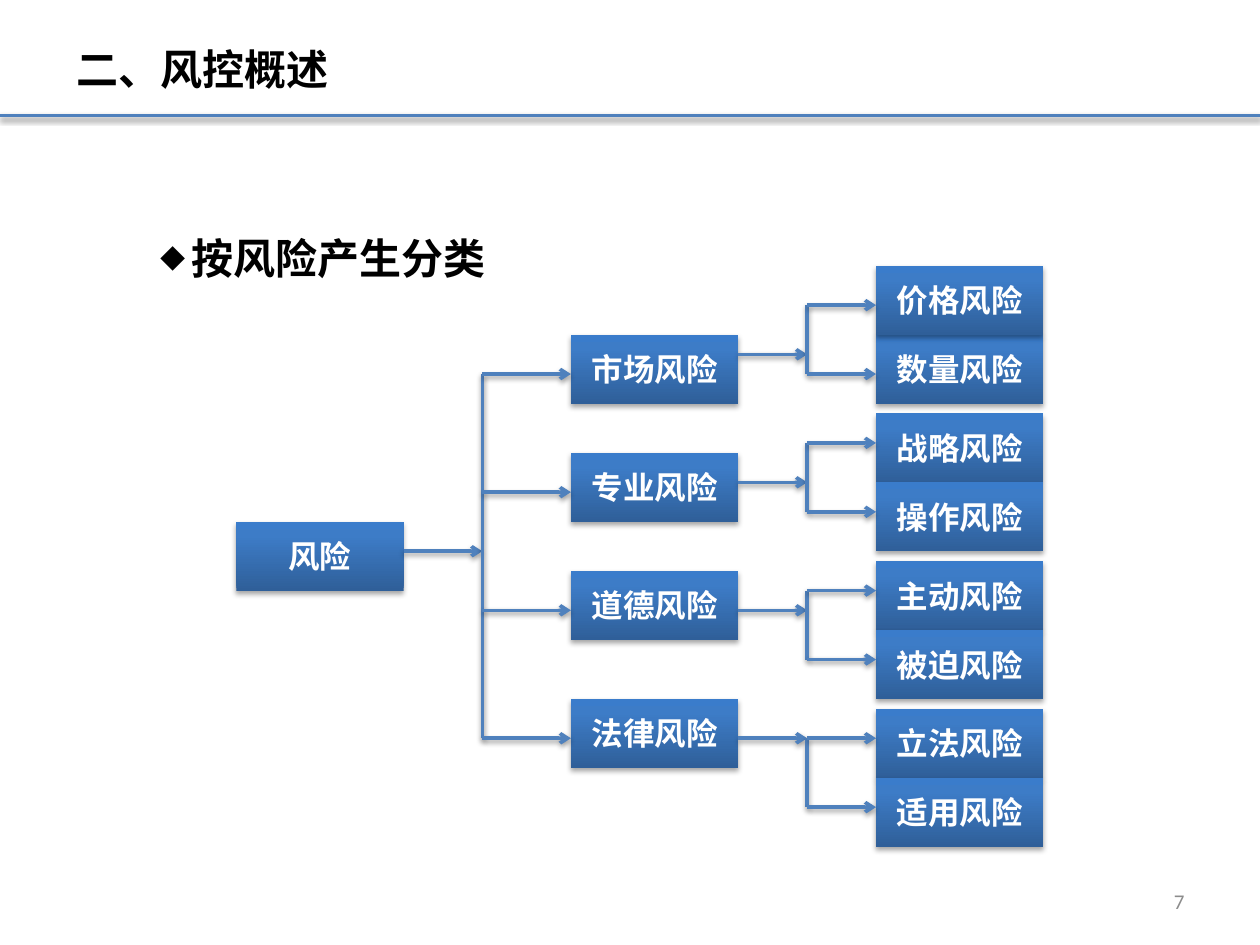
from pptx import Presentation
from pptx.dml.color import RGBColor as Rgb
from pptx.enum.shapes import MSO_CONNECTOR as Conn, MSO_SHAPE as Shape
from pptx.enum.text import MSO_ANCHOR as Anchor, MSO_AUTO_SIZE as Fit, PP_ALIGN as Align
from pptx.oxml import parse_xml
from pptx.oxml.ns import nsdecls
from pptx.util import Inches, Pt

BLUE = Rgb(0x4F, 0x81, 0xBD)
DARK = Rgb(0x2F, 0x5F, 0x99)
MID = Rgb(0x3D, 0x7C, 0xC7)
LIGHT = Rgb(0x3A, 0x7C, 0xCB)
WHITE = Rgb(0xFF, 0xFF, 0xFF)
BLACK = Rgb(0, 0, 0)
GREY = Rgb(0x8C, 0x8C, 0x8C)
HAN = "Noto Sans CJK SC"
COLS = 128
WIDE, HIGH = 17, 7
ROOT, BUS, MAIN, FORK, LEAF = 24, 49, 58, 82, 89
TREE = [
    ("市场风险", 34, 38, 36, [("数量风险", 34, 38), ("价格风险", 27, 31)]),
    ("专业风险", 46, 50, 49, [("战略风险", 42, 45), ("操作风险", 49, 52)]),
    ("道德风险", 58, 62, 62, [("主动风险", 57, 60), ("被迫风险", 64, 67)]),
    ("法律风险", 71, 75, 75, [("立法风险", 72, 75), ("适用风险", 79, 82)]),
]


def node(xml):
    tag, rest = xml.split(">", 1)
    head, gap, more = tag.partition(" ")
    return parse_xml(f"{head} {nsdecls('a')} {more}>{rest}")


def write(frame, text, size=24, color=BLACK, font=HAN, bold=True,
          align=Align.LEFT, anchor=Anchor.TOP, bullet=None):
    frame.word_wrap = True
    frame.vertical_anchor = anchor
    para = frame.paragraphs[0]
    para.alignment = align
    if bullet:
        props = para._p.get_or_add_pPr()
        props.set("marL", str(Inches(0.33)))
        props.set("indent", str(-Inches(0.25)))
        props.append(node('<a:buSzPct val="60000"></a:buSzPct>'))
        props.append(node(f'<a:buFont typeface="{font}"></a:buFont>'))
        props.append(node(f'<a:buChar char="{bullet}"></a:buChar>'))
    run = para.add_run()
    run.text = text
    run.font.size, run.font.bold, run.font.name = Pt(size), bold, font
    run.font.color.rgb = color
    run._r.get_or_add_rPr().append(node(f'<a:ea typeface="{font}"></a:ea>'))


class Board:
    def __init__(self, deck):
        self.items = deck.slides.add_slide(deck.slide_layouts[6]).shapes
        self.unit = deck.slide_width / COLS

    def at(self, *cells):
        return [round(cell * self.unit) for cell in cells]

    def shade(self, item, alpha, dist):
        item._element.spPr.append(node(
            f'<a:effectLst><a:outerShdw blurRad="{Pt(3.1)}" dist="{Pt(dist)}" '
            f'dir="5400000" rotWithShape="0"><a:srgbClr val="{BLACK}">'
            f'<a:alpha val="{alpha}000"/></a:srgbClr></a:outerShdw></a:effectLst>'))

    def box(self, name, col, row):
        item = self.items.add_shape(Shape.RECTANGLE, *self.at(col, row, WIDE, HIGH))
        item.line.fill.background()
        stops = "".join(f'<a:gs pos="{pos}000"><a:srgbClr val="{tone}"/></a:gs>'
                        for pos, tone in [(0, DARK), (80, MID), (100, LIGHT)])
        item._element.spPr.insert(2, node(
            f'<a:gradFill rotWithShape="1"><a:gsLst>{stops}</a:gsLst>'
            '<a:lin ang="16200000" scaled="0"/></a:gradFill>'))
        self.shade(item, 35, 1.8)
        write(item.text_frame, name, size=18, color=WHITE,
              align=Align.CENTER, anchor=Anchor.MIDDLE)

    def line(self, x, y, to_x, to_y, arrow=False):
        item = self.items.add_connector(Conn.STRAIGHT, *self.at(x, y, to_x, to_y))
        item.line.color.rgb = BLUE
        item.line.width = Pt(2)
        if arrow:
            item.line._get_or_add_ln().append(node('<a:tailEnd type="arrow"></a:tailEnd>'))
        self.shade(item, 38, 1.6)

    def arrow(self, x, to_x, y):
        self.line(x, y, to_x, y, arrow=True)

    def stem(self, x, rows):
        self.line(x, min(rows), x, max(rows))

    def text(self, words, col, row, wide, high, grow=True, **form):
        item = self.items.add_textbox(*self.at(col, row, wide, high))
        write(item.text_frame, words, **form)
        if grow:
            item.text_frame.auto_size = Fit.SHAPE_TO_FIT_TEXT


def main():
    deck = Presentation()
    deck.slide_width, deck.slide_height = Inches(10), Inches(7.5)
    board = Board(deck)
    board.line(0, 11.75, COLS, 11.75)
    board.text("二、风控概述", 6.5, 3.75, 33.25, 6.5)
    board.text("按风险产生分类", 14, 23, 48, 6.5, bullet="◆")
    board.box("风险", ROOT, 53)
    board.arrow(ROOT + WIDE, BUS, 56)
    board.stem(BUS, [entry for name, top, entry, out, leaves in TREE])
    for name, top, entry, out, leaves in TREE:
        board.box(name, MAIN, top)
        board.arrow(BUS, MAIN, entry)
        board.arrow(MAIN + WIDE, FORK, out)
        board.stem(FORK, [row for leaf, edge, row in leaves])
        for leaf, edge, row in leaves:
            board.box(leaf, LEAF, edge)
            board.arrow(FORK, LEAF, row)
    board.text("7", 91.75, 89, 29.85, 5.1, grow=False, size=12, color=GREY,
               font="Calibri", bold=False, align=Align.RIGHT, anchor=Anchor.MIDDLE)
    deck.save("out.pptx")


if __name__ == "__main__":
    main()
